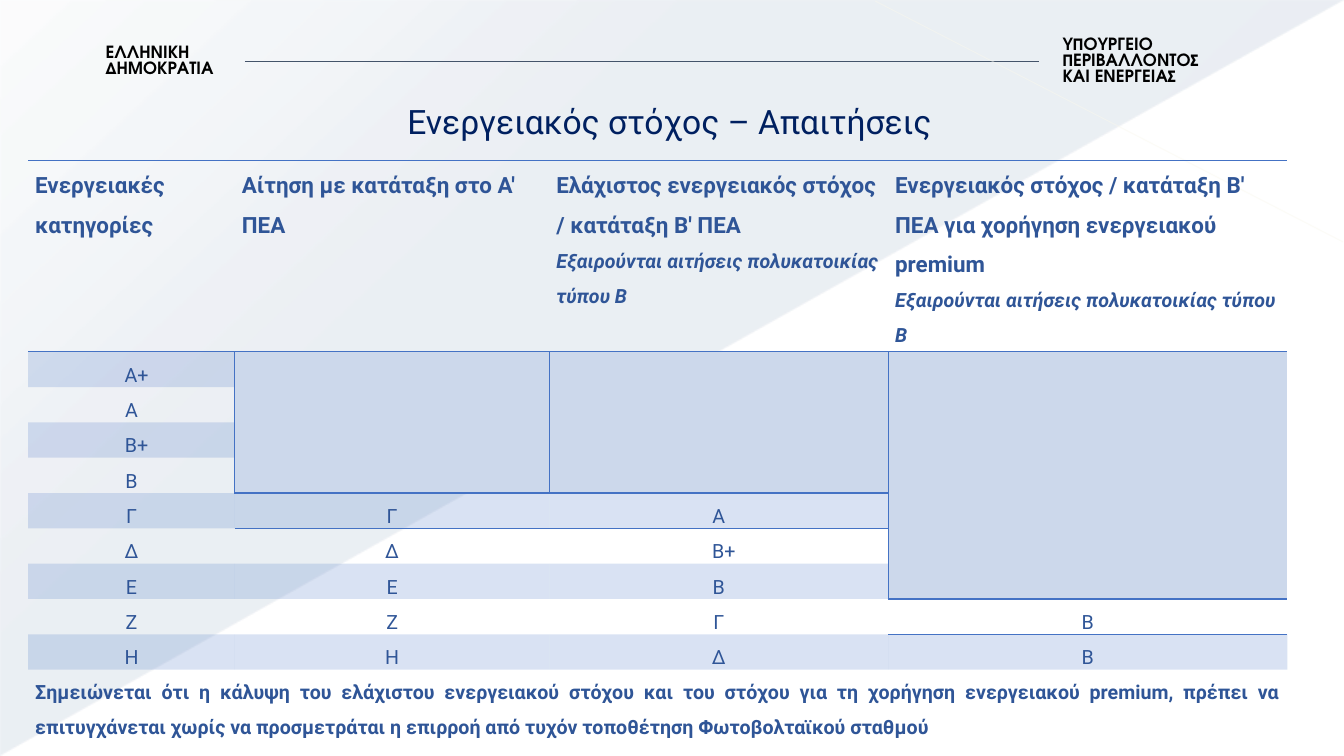
import pptx
import pptx.util
import pptx.oxml
import pptx.oxml.ns
import pptx.dml.color
import pptx.enum.text
import pptx.enum.shapes
from lxml import etree

W, H = 13.33, 7.5
COLORS = {"navy": "002060", "text": "2F5597", "accent": "4472C4", "block": "CCD8EB",
          "black": "000000", "rule": "44546A", "cream": "FAF8EE", "wash": "1F497D"}
BODY, LABEL = "Roboto", "TeX Gyre Adventor"

TITLE = "Ενεργειακός στόχος – Απαιτήσεις"
LABELS = [
    ("ΥΠΟΥΡΓΕΙΟ ΠΕΡΙΒΑΛΛΟΝΤΟΣ ΚΑΙ ΕΝΕΡΓΕΙΑΣ", (10.44, 0.32, 1.85, 0.59)),
    ("ΕΛΛΗΝΙΚΗ ΔΗΜΟΚΡΑΤΙΑ", (0.95, 0.4, 1.85, 0.42)),
]
RULES = [
    ((2.43, 0.61), (10.31, 0.61), "rule", 1, 100),
    ((13.32, 2.4), (8.68, 0.01), "cream", 0.75, 45),
]
EXCEPTION = "Εξαιρούνται αιτήσεις πολυκατοικίας τύπου Β"
HEADERS = [
    ["Ενεργειακές κατηγορίες"],
    ["Αίτηση με κατάταξη στο Α' ΠΕΑ"],
    ["Ελάχιστος ενεργειακός στόχος / κατάταξη Β' ΠΕΑ", EXCEPTION],
    ["Ενεργειακός στόχος / κατάταξη Β' ΠΕΑ για χορήγηση ενεργειακού premium", EXCEPTION],
]
CATEGORIES = [
    ["Α+", "Β+", "Γ", "Ε", "Η"],
    ["Α", "Β", "Δ", "Ζ"],
]
COLUMNS = [
    ["Α+", "Α", "Β+", "Β", "Γ", "Δ", "Ε", "Ζ", "Η"],
    ["Γ", "Δ", "Ε", "Ζ", "Η"],
    ["Α", "Β+", "Β", "Γ", "Δ"],
    ["Β", "Β"],
]
NOTE = ("Σημειώνεται ότι η κάλυψη του ελάχιστου ενεργειακού στόχου και του στόχου για τη "
        "χορήγηση ενεργειακού premium, πρέπει να επιτυγχάνεται χωρίς να προσμετράται η "
        "επιρροή από τυχόν τοποθέτηση Φωτοβολταϊκού σταθμού")
TABLE = (0.28, 1.59, 12.49, 5.81)
COL_WIDTHS = [2.05, 3.12, 3.36, 3.96]
LEVELS = len(COLUMNS[0])
ROW_HEIGHTS = [1.77] + [0.29] * LEVELS + [0.89]

NO_STYLE = "{2D5ABB26-0587-4C30-8999-92F81FD0307C}"
ALIGN = pptx.enum.text.PP_ALIGN
ANCHOR = pptx.enum.text.MSO_ANCHOR
SHAPES = pptx.enum.shapes
inch = pptx.util.Inches
qn = pptx.oxml.ns.qn


def rgb(name):
    return pptx.dml.color.RGBColor.from_string(COLORS[name])


def set_alpha(parent, percent):
    for color in parent.iter(qn("a:srgbClr")):
        etree.SubElement(color, qn("a:alpha"), val=str(percent * 1000))


def write(p, text, size, color, font=BODY, bold=False, italic=False, align=ALIGN.LEFT, spacing=1.5):
    p.text = text
    p.alignment = align
    p.line_spacing = spacing
    p.font.name, p.font.size = font, pptx.util.Pt(size)
    p.font.bold, p.font.italic = bold, italic
    p.font.color.rgb = rgb(color)


def add_text(s, box, text, anchor=ANCHOR.TOP, **style):
    tf = s.shapes.add_textbox(*map(inch, box)).text_frame
    tf.word_wrap = True
    tf.vertical_anchor = anchor
    write(tf.paragraphs[0], text, **style)


def add_wash(s):
    sp = s.shapes.add_shape(SHAPES.MSO_SHAPE.RIGHT_TRIANGLE,
                            *map(inch, (0.01, 0.01, W - 0.02, H - 0.02)))
    sp.shadow.inherit = False
    sp.rotation = 180
    sp.line.fill.background()
    xfrm = sp.element.spPr.find(qn("a:xfrm"))
    xfrm.set("flipH", "1")
    grad = etree.Element(qn("a:gradFill"), rotWithShape="1")
    stops = etree.SubElement(grad, qn("a:gsLst"))
    for pos, alpha in ((0, 10), (70, 8), (100, 1)):
        stop = etree.SubElement(stops, qn("a:gs"), pos=str(pos * 1000))
        etree.SubElement(stop, qn("a:srgbClr"), val=COLORS["wash"])
        set_alpha(stop, alpha)
    etree.SubElement(grad, qn("a:lin"), ang=str(133 * 60000), scaled="0")
    sp.element.spPr.find(qn("a:prstGeom")).addnext(grad)


def add_rule(s, start, end, color, width, alpha):
    line = s.shapes.add_connector(SHAPES.MSO_CONNECTOR.STRAIGHT, *map(inch, start + end))
    line.line.color.rgb = rgb(color)
    line.line.width = pptx.util.Pt(width)
    spPr = line.element.spPr
    if alpha < 100:
        set_alpha(spPr, alpha)
    etree.SubElement(spPr, qn("a:effectLst"))


def add_borders(cell, sides):
    tcPr = cell._tc.get_or_add_tcPr()
    for i, side in enumerate(x for x in "LRTB" if x in sides):
        ln = etree.Element(qn("a:ln" + side), w=str(pptx.util.Pt(1)))
        fill = etree.SubElement(ln, qn("a:solidFill"))
        etree.SubElement(fill, qn("a:srgbClr"), val=COLORS["accent"])
        tcPr.insert(i, ln)


def shade(cell, color=None, alpha=100):
    if color is None:
        cell.fill.background()
        return
    cell.fill.solid()
    cell.fill.fore_color.rgb = rgb(color)
    if alpha < 100:
        set_alpha(cell._tc.tcPr, alpha)


def fill_level(cell, row, col):
    first = LEVELS - len(COLUMNS[col]) + 1
    sides = ""
    if row < first:
        shade(cell, "block")
        p = cell.text_frame.paragraphs[0]
        etree.SubElement(p._p, qn("a:endParaRPr"), sz="1400")
        sides += "L"
        if col == 3 and row < 5:
            sides = ""
        if col == 1:
            sides += "R"
        if row == first - 1:
            sides += "B"
    else:
        shade(cell, *(("accent", 20) if row % 2 else ()))
        text = COLUMNS[col][row - first]
        cell.vertical_anchor = ANCHOR.BOTTOM
        if text.endswith("+"):
            cell.margin_left = inch(0.17)
        write(cell.text_frame.paragraphs[0], text, 14, "text", align=ALIGN.CENTER)
        if col and row == first:
            sides += "TB"
        if (col == 0 and row < 5) or (col == 2 and row < 8):
            sides += "R"
    add_borders(cell, sides)


def add_targets(s):
    table = s.shapes.add_table(len(ROW_HEIGHTS), len(COL_WIDTHS), *map(inch, TABLE)).table
    table.first_row = table.horz_banding = False
    table._tbl.tblPr.find(qn("a:tableStyleId")).text = NO_STYLE
    for column, width in zip(table.columns, COL_WIDTHS):
        column.width = inch(width)
    for row, height in zip(table.rows, ROW_HEIGHTS):
        row.height = inch(height)
    for cell in table.iter_cells():
        cell.margin_left = cell.margin_right = inch(0.07)
        cell.margin_top = cell.margin_bottom = 0
    for col, lines in enumerate(HEADERS):
        cell = table.cell(0, col)
        shade(cell)
        add_borders(cell, "TB")
        for i, text in enumerate(lines):
            p = cell.text_frame.add_paragraph() if i else cell.text_frame.paragraphs[0]
            write(p, text, 14 if i else 16, "text", bold=True, italic=i > 0)
        for row in range(1, LEVELS + 1):
            fill_level(table.cell(row, col), row, col)
    last = LEVELS + 1
    for col in range(len(COL_WIDTHS)):
        shade(table.cell(last, col))
        add_borders(table.cell(last, col), "B")
    note = table.cell(last, 0)
    note.merge(table.cell(last, len(COL_WIDTHS) - 1))
    write(note.text_frame.paragraphs[0], NOTE, 14, "text", bold=True, align=ALIGN.JUSTIFY)


def main():
    prs = pptx.Presentation()
    prs.slide_width, prs.slide_height = inch(W), inch(H)
    s = prs.slides.add_slide(prs.slide_layouts[6])
    add_wash(s)
    for rule in RULES:
        add_rule(s, *rule)
    for text, box in LABELS:
        add_text(s, box, text, size=12, color="black", font=LABEL, bold=True, spacing=0.8)
    add_text(s, (0.89, 0.94, 11.5, 0.58), TITLE, ANCHOR.MIDDLE, size=24, color="navy",
             align=ALIGN.CENTER, spacing=0.9)
    add_targets(s)
    prs.save("out.pptx")


if __name__ == "__main__":
    main()
